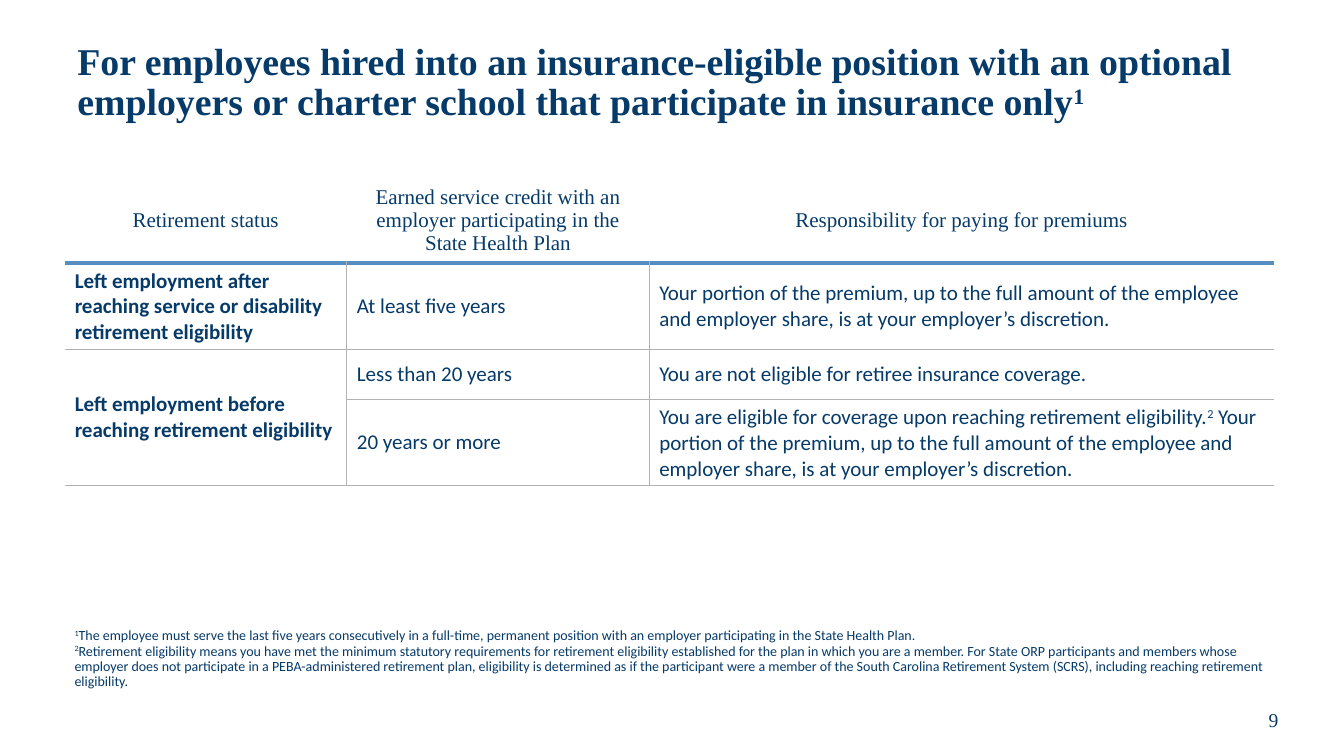
"""Build the slide on who pays retiree insurance premiums."""
from lxml import etree
from pptx import Presentation
from pptx.dml.color import RGBColor
from pptx.enum.text import MSO_ANCHOR, MSO_AUTO_SIZE, PP_ALIGN
from pptx.oxml.ns import qn
from pptx.util import Cm, Pt

MIDDLE, TOP = MSO_ANCHOR.MIDDLE, MSO_ANCHOR.TOP
LEFT, CENTER = PP_ALIGN.LEFT, PP_ALIGN.CENTER
GROW = MSO_AUTO_SIZE.SHAPE_TO_FIT_TEXT

COLORS = {"navy": "063A68", "header_rule": "568EC1", "grid": "B2B2B2"}
SERIF, SANS = "Times New Roman", "Calibri"

# Text between carets is superscript.
TITLE = ("For employees hired into an insurance-eligible position with an optional "
         "employers or charter school that participate in insurance only^1^")
FOOTNOTES = [
    "^1^The employee must serve the last five years consecutively in a full-time, "
    "permanent position with an employer participating in the State Health Plan.",
    "^2^Retirement eligibility means you have met the minimum statutory requirements "
    "for retirement eligibility established for the plan in which you are a member. "
    "For State ORP participants and members whose employer does not participate in a "
    "PEBA-administered retirement plan, eligibility is determined as if the participant "
    "were a member of the South Carolina Retirement System (SCRS), including reaching "
    "retirement eligibility.",
]
PAGE_NUMBER = "9"
PREMIUMS = [
    ("Retirement status",
     "Earned service credit with an\vemployer participating in the\vState Health Plan",
     "Responsibility for paying for premiums"),
    ("Left employment after reaching service or disability retirement eligibility",
     "At least five years",
     "Your portion of the premium, up to the full amount of the employee and employer "
     "share, is at your employer’s discretion."),
    ("Left employment before reaching retirement eligibility",
     "Less than 20 years",
     "You are not eligible for retiree insurance coverage."),
    (None,
     "20 years or more",
     "You are eligible for coverage upon reaching retirement eligibility.^2^ Your "
     "portion of the premium, up to the full amount of the employee and employer "
     "share, is at your employer’s discretion."),
]
COLUMN_WIDTHS = [7.11, 7.62, 15.75]
ROW_HEIGHTS = [2.15, 2.17, 1.27, 2.17]


def write(paragraph, text, font, size, bold=False, align=LEFT, spacing=None):
    for index, part in enumerate(text.split("^")):
        if index % 2:
            run = paragraph.add_run()
            run.text = part
            run._r.get_or_add_rPr().set("baseline", "30000")
        else:
            for line_index, line in enumerate(part.split("\v")):
                if line_index:
                    paragraph.add_line_break()
                if line:
                    paragraph.add_run().text = line
    paragraph.alignment = align
    paragraph.line_spacing = spacing
    paragraph.font.name = font
    paragraph.font.size = Pt(size)
    paragraph.font.bold = bold
    paragraph.font.color.rgb = RGBColor.from_string(COLORS["navy"])


def add_text(slide, place, texts, anchor, **style):
    frame = slide.shapes.add_textbox(*map(Cm, place)).text_frame
    frame.word_wrap = True
    frame.vertical_anchor = anchor
    for index, text in enumerate(texts):
        paragraph = frame.add_paragraph() if index else frame.paragraphs[0]
        write(paragraph, text, **style)
    return frame


def set_border(cell, side, color, points):
    line = etree.SubElement(cell._tc.get_or_add_tcPr(), qn(f"a:ln{side}"),
                            w=str(Pt(points)))
    if color:
        fill = etree.SubElement(line, qn("a:solidFill"))
        etree.SubElement(fill, qn("a:srgbClr"), val=COLORS[color])
    else:
        etree.SubElement(line, qn("a:noFill"))


def add_premiums(slide):
    rows, columns = len(PREMIUMS), len(COLUMN_WIDTHS)
    table = slide.shapes.add_table(rows, columns, Cm(1.63), Cm(4.47),
                                   Cm(sum(COLUMN_WIDTHS)), Cm(sum(ROW_HEIGHTS))).table
    table.first_row = table.horz_banding = False
    for column, width in zip(table.columns, COLUMN_WIDTHS):
        column.width = Cm(width)
    for row, height in zip(table.rows, ROW_HEIGHTS):
        row.height = Cm(height)

    none, grid, header_rule = (None, 0), ("grid", 0.5), ("header_rule", 3)
    for r, texts in enumerate(PREMIUMS):
        for c, text in enumerate(texts):
            cell = table.cell(r, c)
            set_border(cell, "L", *(grid if r and c else none))
            set_border(cell, "R", *(grid if r and c < columns - 1 else none))
            set_border(cell, "T", *(none, header_rule, grid, grid)[r])
            set_border(cell, "B", *(grid if r else header_rule))
            cell.fill.background()
            cell.vertical_anchor = MIDDLE
            if text is None:
                table.cell(r - 1, c).merge(cell)
                continue
            write(cell.text_frame.paragraphs[0], text, SANS if r else SERIF, 15,
                  bold=r > 0 and c == 0, align=LEFT if r else CENTER)


def main():
    deck = Presentation()
    deck.slide_width, deck.slide_height = Cm(33.87), Cm(19.05)
    slide = deck.slides.add_slide(deck.slide_layouts[6])
    add_text(slide, (30.61, 17.5, 2.97, 1.27), [PAGE_NUMBER], MIDDLE,
             font=SERIF, size=14, align=CENTER)
    add_text(slide, (1.7, 0.64, 30.48, 2.92), [TITLE], MIDDLE,
             font=SERIF, size=27, bold=True, spacing=0.9)
    footnotes = add_text(slide, (1.63, 15.72, 30.48, 1.8), FOOTNOTES, TOP,
                         font=SANS, size=10, spacing=0.9)
    footnotes.auto_size = GROW
    add_premiums(slide)
    deck.save("out.pptx")


if __name__ == "__main__":
    main()
